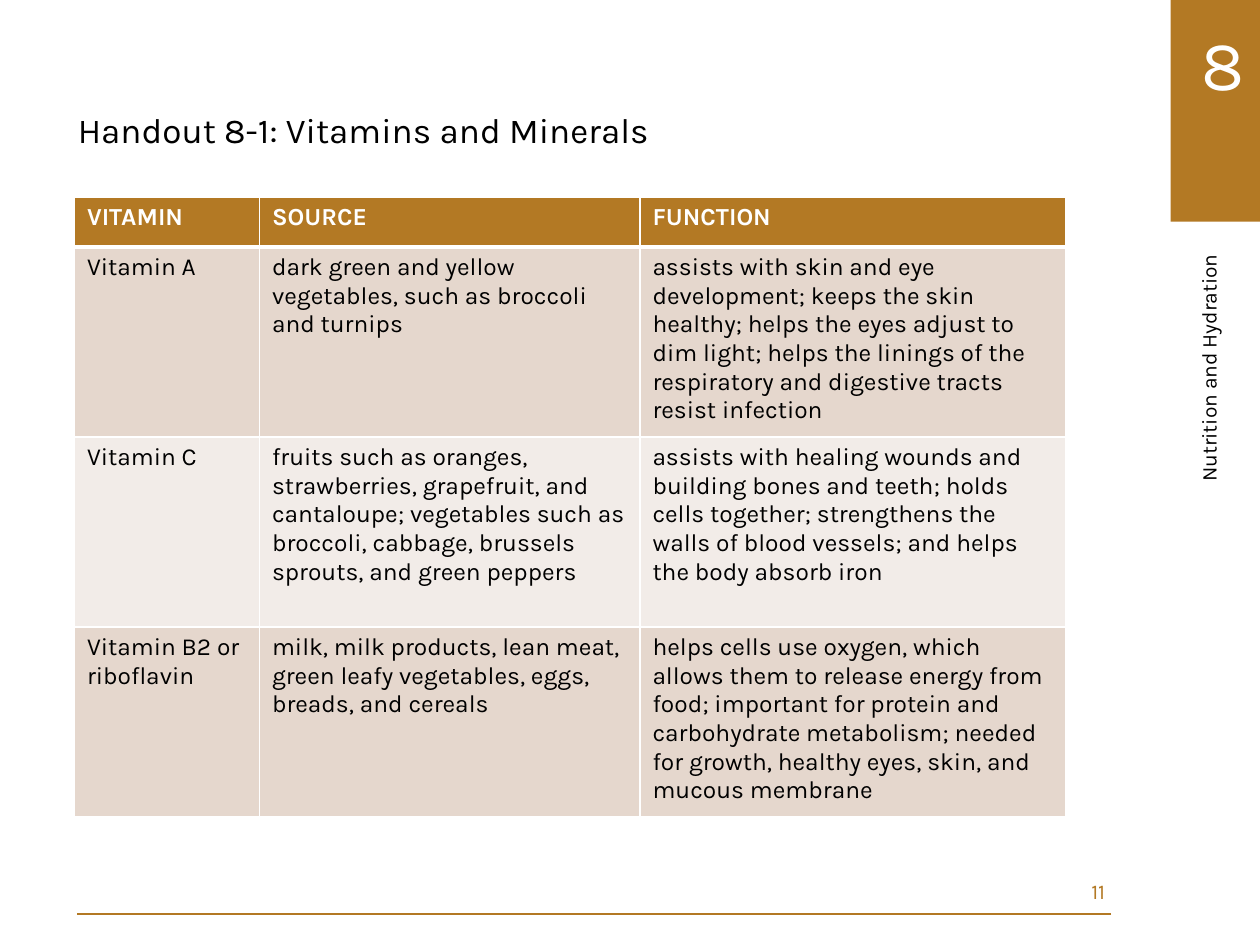
from lxml import etree
from pptx import Presentation
from pptx.dml.color import RGBColor
from pptx.enum.shapes import MSO_CONNECTOR, MSO_SHAPE
from pptx.enum.text import MSO_ANCHOR, MSO_AUTO_SIZE, PP_ALIGN
from pptx.oxml import parse_xml
from pptx.oxml.ns import qn
from pptx.util import Cm, Pt

RECT, LINE = MSO_SHAPE.RECTANGLE, MSO_CONNECTOR.STRAIGHT
LEFT, RIGHT = PP_ALIGN.LEFT, PP_ALIGN.RIGHT
TOP, MIDDLE = MSO_ANCHOR.TOP, MSO_ANCHOR.MIDDLE
GROW = MSO_AUTO_SIZE.SHAPE_TO_FIT_TEXT

THEME = {
    "font": "Karla",
    "gold": "B37924", "white": "FFFFFF", "black": "000000",
    "bands": ("E5D7CD", "F2ECE8"),
    "small": 12, "cell": 14, "title": 20, "number": 40,
}

# Content
CHAPTER, TOPIC, PAGE = "8", "Nutrition and Hydration", "11"
TITLE = "Handout 8-1: Vitamins and Minerals"
HEAD = ("VITAMIN", "SOURCE", "FUNCTION")
ROWS = [
    ("Vitamin A",
     "dark green and yellow vegetables, such as broccoli and turnips",
     "assists with skin and eye development; keeps the skin healthy; helps "
     "the eyes adjust to dim light; helps the linings of the respiratory and "
     "digestive tracts resist infection"),
    ("Vitamin C",
     "fruits such as oranges, strawberries, grapefruit, and cantaloupe; "
     "vegetables such as broccoli, cabbage, brussels sprouts, and green "
     "peppers",
     "assists with healing wounds and building bones and teeth; holds cells "
     "together; strengthens the walls of blood vessels; and helps the body "
     "absorb iron"),
    ("Vitamin B2 or riboflavin",
     "milk, milk products, lean meat, green leafy vegetables, eggs, breads, "
     "and cereals",
     "helps cells use oxygen, which allows them to release energy from food; "
     "important for protein and carbohydrate metabolism; needed for growth, "
     "healthy eyes, skin, and mucous membrane"),
]
COLS = (3.73, 7.67, 8.59)
HEAD_H, ROW_H = 1.01, 3.83


def rgb(name):
    return RGBColor.from_string(THEME.get(name, name))


def style(para, size, color, bold=False):
    font = para.font
    font.name, font.size, font.bold = THEME["font"], Pt(THEME[size]), bold
    font.color.rgb = rgb(color)


def label(slide, text, at, size, color, align=LEFT, anchor=TOP):
    box = slide.shapes.add_textbox(*map(Cm, at))
    frame = box.text_frame
    frame.word_wrap, frame.vertical_anchor = True, anchor
    para = frame.paragraphs[0]
    para.text, para.alignment = text, align
    style(para, size, color)
    return box


def edge(cell, base):
    """White cell borders; base is the bottom width in points."""
    props = cell._tc.get_or_add_tcPr()
    for side, width in (("L", 1), ("R", 1), ("T", 1), ("B", base)):
        props.append(parse_xml(
            '<a:ln%s xmlns:a="http://schemas.openxmlformats.org/drawingml/2006/main"'
            ' w="%d"><a:solidFill><a:srgbClr val="%s"/></a:solidFill></a:ln%s>'
            % (side, Pt(width), THEME["white"], side)))


def fill_table(slide):
    data = [HEAD] + ROWS
    high = HEAD_H + ROW_H * len(ROWS)
    table = slide.shapes.add_table(
        len(data), len(COLS), Cm(1.5), Cm(3.97), Cm(sum(COLS)), Cm(high)).table
    for col, wide in zip(table.columns, COLS):
        col.width = Cm(wide)
    for r, texts in enumerate(data):
        top = r == 0
        table.rows[r].height = Cm(HEAD_H if top else ROW_H)
        for c, text in enumerate(texts):
            cell = table.cell(r, c)
            edge(cell, 3 if top else 1)
            cell.fill.solid()
            cell.fill.fore_color.rgb = rgb(
                "gold" if top else THEME["bands"][(r - 1) % 2])
            cell.text = text
            style(cell.text_frame.paragraphs[0], "cell",
                  "white" if top else "black", top)


def main():
    deck = Presentation()
    deck.slide_width, deck.slide_height = Cm(25.4), Cm(19.05)
    slide = deck.slides.add_slide(deck.slide_layouts[6])

    # Chapter tab with its number and topic
    tab = slide.shapes.add_shape(RECT, Cm(23.6), 0, Cm(1.8), Cm(4.47))
    tab.shadow.inherit = False
    tab.fill.solid()
    tab.fill.fore_color.rgb = rgb("gold")
    tab.line.fill.background()
    topic = label(slide, TOPIC, (23.98, 4.88, 1.02, 9.22), "small", "black", RIGHT)
    topic.element.txBody.bodyPr.set("vert", "vert270")
    number = label(slide, CHAPTER, (23.98, 0.28, 3.78, 1.96), "number", "white")
    for box in (topic, number):
        box.text_frame.auto_size = GROW

    # Footer rule and page number
    rule = slide.shapes.add_connector(LINE, Cm(22.4), Cm(18.42), Cm(1.55), Cm(18.42))
    rule.line.color.rgb, rule.line.width = rgb("gold"), Pt(1)
    etree.SubElement(rule.element.spPr, qn("a:effectLst"))
    label(slide, PAGE, (19.84, 17.45, 2.69, 1.02), "small", "gold", RIGHT, MIDDLE)

    # Title and vitamin table
    title = label(slide, TITLE, (1.32, 2.16, 21.31, 14.99), "title", "black")
    para = title.text_frame.paragraphs[0]
    para.line_spacing, para.space_after = 0.9, Pt(6)
    fill_table(slide)

    deck.save("out.pptx")


if __name__ == "__main__":
    main()
